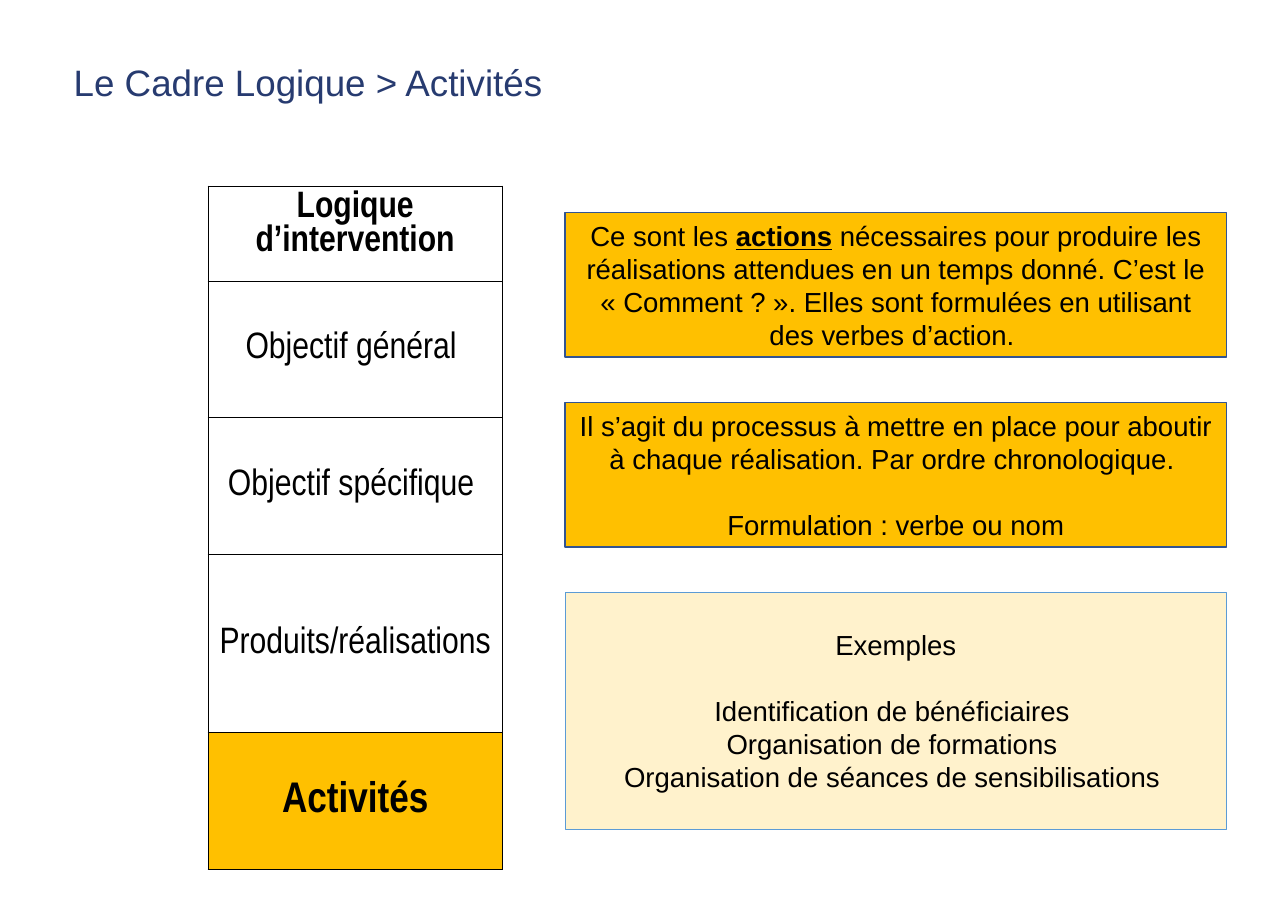
from lxml import etree
from pptx import Presentation
from pptx import util as u
from pptx.dml.color import RGBColor
from pptx.enum import shapes, text
from pptx.oxml.ns import qn

COLOURS = {
    "title": "273B70", "ink": "000000", "paper": "FFFFFF", "gold": "FFC000",
    "cream": "FFF2CC", "navy": "325491", "sky": "5B9BD5",
}
TITLE = "Le Cadre Logique > Activités"
LEVELS = [
    ("Logique d’intervention", 62, 24, True, "paper"),
    ("Objectif général ", 89.3, 24, False, "paper"),
    ("Objectif spécifique ", 89.3, 24, False, "paper"),
    ("Produits/réalisations ", 116.6, 24, False, "paper"),
    ("Activités", 89.3, 28, True, "gold"),
]
NOTES = [
    (94.3, "gold", "navy", 1, [
        (0, [("Ce sont les ", False), ("actions", True),
             (" nécessaires pour produire les réalisations attendues en un temps donné. "
              "C’est le « Comment ? ». Elles sont formulées en utilisant des verbes d’action. ", False)]),
    ]),
    (94.3, "gold", "navy", 1, [
        (0, [("Il s’agit du processus à mettre en place pour aboutir à chaque réalisation. "
              "Par ordre chronologique. ", False)]),
        (21.5, [("Formulation : verbe ou nom", False)]),
    ]),
    (154.8, "cream", "sky", 0.5, [
        (0, [("Exemples", False)]),
        (21.5, [("Identification de bénéficiaires ", False)]),
        (0, [("Organisation de formations ", False)]),
        (0, [("Organisation de séances de sensibilisations ", False)]),
    ]),
]
TABLE_LEFT, TABLE_TOP, TABLE_WIDTH = 136, 121.7, 192.2
NOTE_LEFT, NOTE_TOP, NOTE_WIDTH, NOTE_GAP = 369.4, 139, 432, 29.8


def colour(name):
    return RGBColor.from_string(COLOURS[name])


def paint(item, name):
    item.fill.solid()
    item.fill.fore_color.rgb = colour(name)


def add_span(para, words, size, ink="ink", face="Arial", bold=False, underline=False):
    span = para.add_run()
    span.text = words
    font = span.font
    font.name, font.size, font.bold, font.underline = face, u.Pt(size), bold, underline
    font.color.rgb = colour(ink)


def add_borders(cell):
    properties = cell._tc.get_or_add_tcPr()
    for index, side in enumerate(("lnL", "lnR", "lnT", "lnB")):
        line = etree.Element(qn("a:" + side), w=str(u.Pt(0.75)))
        fill = etree.SubElement(line, qn("a:solidFill"))
        etree.SubElement(fill, qn("a:srgbClr"), val=COLOURS["ink"])
        properties.insert(index, line)


def add_title(page):
    title = page.shapes.title
    title.left, title.top, title.width, title.height = map(u.Pt, (41, 24.5, 776, 62))
    frame = title.text_frame
    frame.auto_size = text.MSO_AUTO_SIZE.NONE
    frame.vertical_anchor = text.MSO_ANCHOR.MIDDLE
    para = frame.paragraphs[0]
    para.alignment, para.line_spacing = text.PP_ALIGN.LEFT, 0.9
    add_span(para, TITLE, 24, "title")


def add_levels(page):
    height = sum(level[1] for level in LEVELS)
    place = map(u.Pt, (TABLE_LEFT, TABLE_TOP, TABLE_WIDTH, height))
    table = page.shapes.add_table(len(LEVELS), 1, *place).table
    table.first_row = table.horz_banding = False
    for index, (words, height, size, bold, fill) in enumerate(LEVELS):
        table.rows[index].height = u.Pt(height)
        cell = table.cell(index, 0)
        cell.margin_left = cell.margin_right = u.Pt(5.4)
        cell.margin_top = cell.margin_bottom = u.Pt(2.7)
        cell.vertical_anchor = text.MSO_ANCHOR.MIDDLE if index else text.MSO_ANCHOR.TOP
        paint(cell, fill)
        add_borders(cell)
        para = cell.text_frame.paragraphs[0]
        para.alignment = text.PP_ALIGN.CENTER
        add_span(para, words, size, face="Arial Narrow", bold=bold)


def add_notes(page):
    top = NOTE_TOP
    for height, fill, edge, weight, paras in NOTES:
        place = map(u.Pt, (NOTE_LEFT, top, NOTE_WIDTH, height))
        box = page.shapes.add_shape(shapes.MSO_SHAPE.RECTANGLE, *place)
        box.shadow.inherit = False
        paint(box, fill)
        box.line.color.rgb, box.line.width = colour(edge), u.Pt(weight)
        frame = box.text_frame
        frame.word_wrap = True
        frame.vertical_anchor = text.MSO_ANCHOR.MIDDLE
        for index, (gap, spans) in enumerate(paras):
            para = frame.add_paragraph() if index else frame.paragraphs[0]
            para.alignment = text.PP_ALIGN.CENTER
            if gap:
                para.space_before = u.Pt(gap)
            for words, strong in spans:
                add_span(para, words, 18, bold=strong, underline=strong)
        top += height + NOTE_GAP


def main():
    deck = Presentation()
    deck.slide_width, deck.slide_height = u.Pt(841.68), u.Pt(595.44)
    page = deck.slides.add_slide(deck.slide_layouts[5])
    add_title(page)
    add_levels(page)
    add_notes(page)
    deck.save("out.pptx")


if __name__ == "__main__":
    main()
